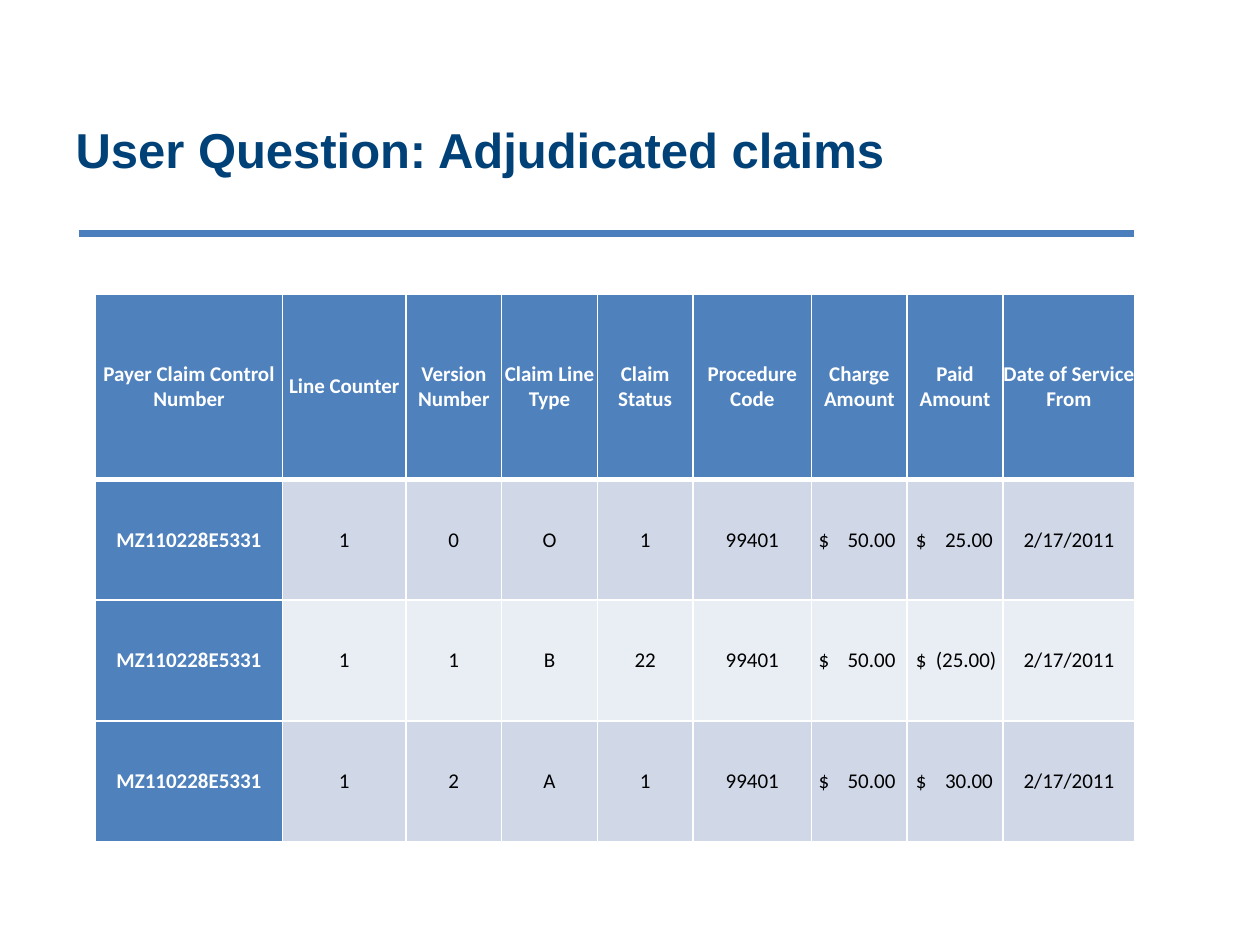
from lxml import etree
from pptx import Presentation
from pptx.dml.color import RGBColor
from pptx.enum.shapes import MSO_CONNECTOR
from pptx.enum.text import MSO_ANCHOR, PP_ALIGN
from pptx.oxml.ns import qn
from pptx.util import Pt

LEFT, CENTER = PP_ALIGN.LEFT, PP_ALIGN.CENTER
MIDDLE = MSO_ANCHOR.MIDDLE
STRAIGHT = MSO_CONNECTOR.STRAIGHT

WHITE, BLACK, NAVY = "FFFFFF", "000000", "004178"
RULE_BLUE, HEADER_BLUE = "4B7EBC", "4F81BD"
BANDS = ("D0D8E8", "E9EDF4")

HEADERS = ["Payer Claim Control Number", "Line Counter", "Version Number",
           "Claim Line Type", "Claim Status", "Procedure Code",
           "Charge Amount", "Paid Amount", "Date of Service From"]
# Only these fields differ between the claim versions
VERSIONS = [("0", "O", "1", "25.00"),
            ("1", "B", "22", "(25.00)"),
            ("2", "A", "1", "30.00")]
CLAIMS = [["MZ110228E5331", "1", version, line_type, status, "99401",
           "$\t50.00", f"$\t{paid}", "2/17/2011"]
          for version, line_type, status, paid in VERSIONS]

COLUMN_WIDTHS = [107, 70.5, 54.7, 54.7, 54.7, 67.7, 54.7, 54.7, 75.5]
ROW_HEIGHTS = [106, 69, 69, 69]
AMOUNT_INSETS = {6: 4, 7: 5}  # column: left inset of the dollar sign


def color(value):
    return RGBColor.from_string(value)


def add_run(paragraph, text, font_name, size, text_color, bold):
    run = paragraph.add_run()
    run.text = text
    run.font.name = font_name
    run.font.size = Pt(size)
    run.font.bold = bold
    run.font.color.rgb = color(text_color)


def place_title(slide, left, top, width, height):
    title = slide.shapes.title
    title.left, title.top = Pt(left), Pt(top)
    title.width, title.height = Pt(width), Pt(height)
    title.text_frame.word_wrap = True
    title.text_frame.vertical_anchor = MIDDLE
    paragraph = title.text_frame.paragraphs[0]
    paragraph.alignment = LEFT
    add_run(paragraph, "User Question: Adjudicated claims", "Arial", 28, NAVY, True)


def add_rule(slide, left, top, width):
    rule = slide.shapes.add_connector(
        STRAIGHT, Pt(left), Pt(top), Pt(left + width), Pt(top))
    rule.line.color.rgb = color(RULE_BLUE)
    rule.line.width = Pt(4)
    etree.SubElement(rule._element.spPr, qn("a:effectLst"))


def set_borders(cell, top_width, bottom_width):
    properties = cell._tc.get_or_add_tcPr()
    for side, width in (("L", 1), ("R", 1), ("T", top_width), ("B", bottom_width)):
        line = etree.SubElement(properties, qn(f"a:ln{side}"), w=str(Pt(width)))
        fill = etree.SubElement(line, qn("a:solidFill"))
        etree.SubElement(fill, qn("a:srgbClr"), val=WHITE)


def add_amount_tab(paragraph, amount):
    # Right tab; a closing parenthesis hangs past the digits
    position = 46 if amount.endswith(")") else 44
    tabs = etree.SubElement(paragraph._p.get_or_add_pPr(), qn("a:tabLst"))
    etree.SubElement(tabs, qn("a:tab"), pos=str(Pt(position)), algn="r")


def fill_cell(cell, text, row, column):
    is_heading = row == 0 or column == 0
    is_amount = row > 0 and column in AMOUNT_INSETS
    set_borders(cell, 3 if row == 1 else 1, 3 if row == 0 else 1)
    cell.fill.solid()
    cell.fill.fore_color.rgb = color(HEADER_BLUE if is_heading else BANDS[(row - 1) % 2])
    cell.margin_left = Pt(AMOUNT_INSETS[column] if is_amount else 0)
    cell.margin_right = cell.margin_top = cell.margin_bottom = Pt(0)
    cell.vertical_anchor = MIDDLE
    paragraph = cell.text_frame.paragraphs[0]
    if is_amount:
        add_amount_tab(paragraph, text)
    paragraph.alignment = LEFT if is_amount else CENTER
    add_run(paragraph, text, "Calibri", 12, WHITE if is_heading else BLACK, is_heading)


def add_claims_table(slide, left, top):
    rows = [HEADERS] + CLAIMS
    table = slide.shapes.add_table(
        len(rows), len(HEADERS), Pt(left), Pt(top),
        Pt(sum(COLUMN_WIDTHS)), Pt(sum(ROW_HEIGHTS))).table
    table.first_col = True
    for column, width in zip(table.columns, COLUMN_WIDTHS):
        column.width = Pt(width)
    for row, height in zip(table.rows, ROW_HEIGHTS):
        row.height = Pt(height)
    for row_index, texts in enumerate(rows):
        for column_index, text in enumerate(texts):
            fill_cell(table.cell(row_index, column_index), text, row_index, column_index)


def main():
    presentation = Presentation()
    presentation.slide_width, presentation.slide_height = Pt(720), Pt(540)
    slide = presentation.slides.add_slide(presentation.slide_layouts[5])
    # Heading and rule
    add_rule(slide, 45, 133.2, 603)
    place_title(slide, 36, 45, 612, 80)
    # Claim versions
    add_claims_table(slide, 54.5, 168)
    presentation.save("out.pptx")


if __name__ == "__main__":
    main()
